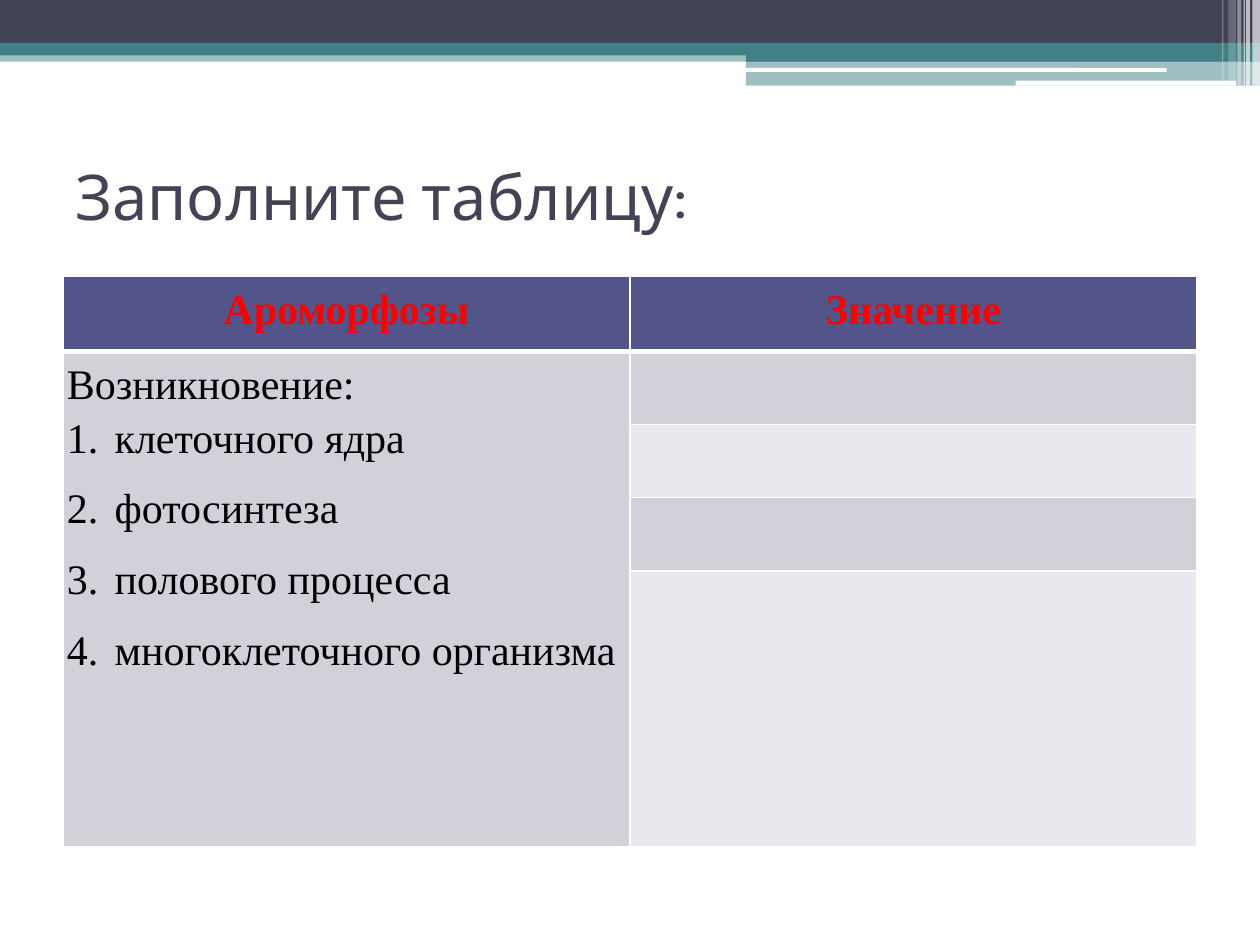
"""Build the slide with a table of aromorphoses to fill in."""
import pptx
import pptx.util
import pptx.dml.color
import pptx.enum.shapes
import pptx.enum.text
import pptx.oxml
import pptx.oxml.ns
import lxml.etree

Inches = pptx.util.Inches
Pt = pptx.util.Pt
qn = pptx.oxml.ns.qn
Shape = pptx.enum.shapes.MSO_SHAPE
Align = pptx.enum.text.PP_ALIGN

COLORS = {"dark": "424456", "teal": "438086", "white": "FFFFFF", "head": "53548A",
          "odd": "D1D1DA", "even": "E9E9ED", "red": "FF0000", "black": "000000"}
TITLE = "Заполните таблицу:"
HEADS = ["Ароморфозы", "Значение"]
LEAD = "Возникновение:"
ITEMS = ["клеточного ядра", "фотосинтеза", "полового процесса",
         "многоклеточного организма"]
ROWS = [0.6, 0.58, 0.58, 0.58, 2.19]
COLS = [4.5, 4.5]
BANDS = [
    (0, 0.4, 10, 0.09, "teal", 50),
    (0, 0, 10, 0.34, "dark", 100),
    (0, 0.34, 10, 0.1, "teal", 100),
    (5.92, 0.39, 4.08, 0.1, "teal", 100),
    (5.92, 0.48, 4.08, 0.2, "teal", 50),
]
PILLS = [(5.91, 0.54, 3.35, 0.03), (8.06, 0.64, 1.75, 0.04)]
STRIPES = [(9.94, 0.06, 0.68, 65), (9.89, 0.03, 0.68, 65), (9.87, 0.01, 0.68, 60),
           (9.82, 0.03, 0.68, 40), (9.75, 0.06, 0.64, 20), (9.7, 0.01, 0.64, 30)]


def paint(fill, name):
    fill.solid()
    fill.fore_color.rgb = pptx.dml.color.RGBColor.from_string(COLORS[name])


def add_bar(slide, box, name, alpha=100, kind=Shape.RECTANGLE):
    bar = slide.shapes.add_shape(kind, *map(Inches, box))
    bar.shadow.inherit = False
    bar.line.fill.background()
    paint(bar.fill, name)
    if alpha < 100:
        color = bar.fill._xPr.find(".//" + qn("a:srgbClr"))
        lxml.etree.SubElement(color, qn("a:alpha"), val=str(alpha * 1000))


def add_run(para, text, size, font, name, bold=False):
    run = para.add_run()
    run.text = text
    run.font.size = Pt(size)
    run.font.name = font
    run.font.bold = bold
    paint(run.font.fill, name)


def add_title(slide):
    box = slide.shapes.add_textbox(Inches(0.5), Inches(1.25), Inches(9), Inches(1.17))
    frame = box.text_frame
    frame.word_wrap = True
    frame.vertical_anchor = pptx.enum.text.MSO_ANCHOR.MIDDLE
    frame.margin_bottom = Inches(0.62)
    add_run(frame.paragraphs[0], TITLE, 36, "Karla", "dark")


def set_edges(cell, top, low):
    props = cell._tc.get_or_add_tcPr()
    edges = [("L", 1), ("R", 1), ("T", top), ("B", low)]
    for spot, (side, width) in enumerate(edges):
        edge = lxml.etree.Element(qn("a:ln" + side), w=str(Pt(width)))
        fill = lxml.etree.SubElement(edge, qn("a:solidFill"))
        lxml.etree.SubElement(fill, qn("a:srgbClr"), val=COLORS["white"])
        props.insert(spot, edge)


def set_number(para):
    props = para._p.get_or_add_pPr()
    props.set("marL", str(Inches(0.38)))
    props.set("indent", str(-Inches(0.38)))
    lxml.etree.SubElement(props, qn("a:buFont"), typeface="+mj-lt")
    lxml.etree.SubElement(props, qn("a:buAutoNum"), type="arabicPeriod")


def add_grid(slide):
    grid = slide.shapes.add_table(len(ROWS), len(COLS), Inches(0.5), Inches(2.19),
                                  Inches(sum(COLS)), Inches(sum(ROWS))).table
    for col, width in zip(grid.columns, COLS):
        col.width = Inches(width)
    for num, (row, height) in enumerate(zip(grid.rows, ROWS)):
        row.height = Inches(height)
        for cell in row.cells:
            cell.margin_left = cell.margin_right = Inches(0.03)
            cell.margin_top = cell.margin_bottom = Inches(0.03)
            paint(cell.fill, "head" if num == 0 else "odd" if num % 2 else "even")
            set_edges(cell, 3 if num == 1 else 1, 3 if num == 0 else 1)
    for cell, text in zip(grid.rows[0].cells, HEADS):
        para = cell.text_frame.paragraphs[0]
        para.alignment = Align.CENTER
        para.line_spacing = 1.15
        add_run(para, text, 24, "Times New Roman", "red", True)
    first = grid.cell(1, 0)
    first.merge(grid.cell(len(ROWS) - 1, 0))
    frame = first.text_frame
    for num, text in enumerate([LEAD] + ITEMS):
        para = frame.add_paragraph() if num else frame.paragraphs[0]
        para.line_spacing = 1.15
        if num:
            para.space_after = Pt(10)
            set_number(para)
        add_run(para, text, 24, "Times New Roman", "black")


def main():
    deck = pptx.Presentation()
    deck.slide_width = Inches(10)
    deck.slide_height = Inches(7.5)
    slide = deck.slides.add_slide(deck.slide_layouts[6])
    for *box, name, alpha in BANDS:
        add_bar(slide, box, name, alpha)
    for box in PILLS:
        add_bar(slide, box, "white", kind=Shape.ROUNDED_RECTANGLE)
    for left, width, height, alpha in STRIPES:
        add_bar(slide, (left, 0, width, height), "white", alpha)
    add_title(slide)
    add_grid(slide)
    deck.save("out.pptx")


if __name__ == "__main__":
    main()
